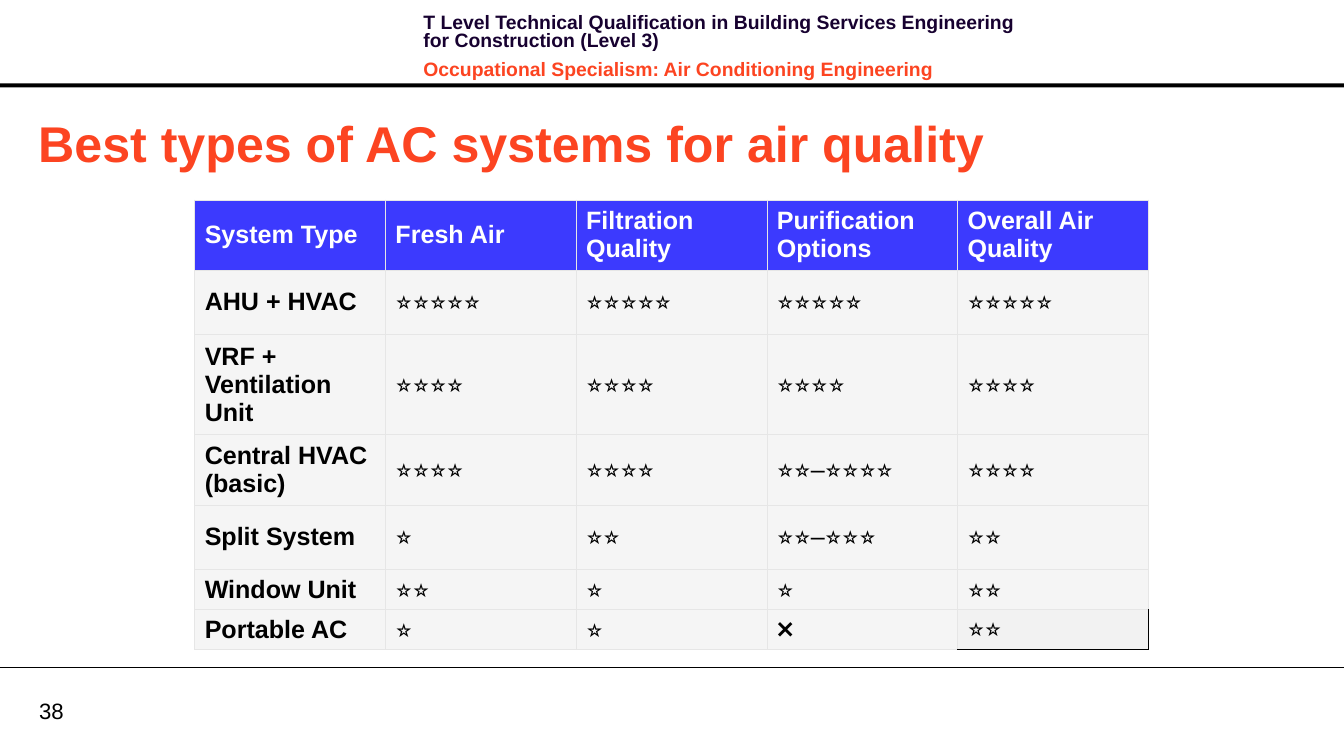
from lxml import etree
from pptx import Presentation
from pptx import util as u
from pptx.dml.color import RGBColor
from pptx.enum import shapes, text
from pptx.oxml import ns

COLOURS = {
    "black": "000000", "white": "FFFFFF", "navy": "170130", "orange": "FC4421",
    "blue": "3C3AFE", "grey": "F5F5F5", "dark grey": "F2F2F2", "border": "E6E6E6",
}


def write(para, words, size, colour, bold=False):
    span = para.add_run()
    span.text = words
    formats = {"name": "Arial", "size": u.Pt(size), "bold": bold}
    for key, value in formats.items():
        setattr(span.font, key, value)
    span.font.color.rgb = RGBColor.from_string(COLOURS[colour])


def set_border(cell, side, colour, width):
    line = etree.SubElement(cell._tc.get_or_add_tcPr(), ns.qn("a:" + side), w=str(u.Pt(width)))
    fill = etree.SubElement(line, ns.qn("a:solidFill"))
    etree.SubElement(fill, ns.qn("a:srgbClr"), val=COLOURS[colour])


deck = Presentation()
deck.slide_width = u.Inches(13.39)
deck.slide_height = u.Inches(7.48)
page = deck.slides.add_slide(deck.slide_layouts[5])

# Header bar and footer rule
bar = page.shapes.add_shape(shapes.MSO_SHAPE.RECTANGLE, 0, u.Inches(0.83), deck.slide_width, u.Inches(0.04))
bar.shadow.inherit = False
bar.fill.solid()
bar.fill.fore_color.rgb = RGBColor.from_string(COLOURS["black"])
bar.line.fill.background()

rule = page.shapes.add_connector(
    shapes.MSO_CONNECTOR.STRAIGHT, 0, u.Inches(6.65), deck.slide_width, u.Inches(6.65))
rule.line.color.rgb = RGBColor.from_string(COLOURS["black"])
rule.line.width = u.Pt(0.75)
etree.SubElement(rule._element.spPr, ns.qn("a:effectLst"))

# Course header
header = page.shapes.add_textbox(u.Inches(4.12), u.Inches(0.1), u.Inches(6.17), u.Inches(0.64)).text_frame
header.word_wrap = True
header_lines = [
    ("T Level Technical Qualification in Building Services Engineering for Construction (Level 3)", "navy"),
    ("Occupational Specialism: Air Conditioning Engineering", "orange"),
]
for index, (words, colour) in enumerate(header_lines):
    para = header.add_paragraph() if index else header.paragraphs[0]
    spacing = {"line_spacing": u.Pt(13), "space_before": u.Pt(4 if index else 0), "space_after": u.Pt(4)}
    for key, value in spacing.items():
        setattr(para, key, value)
    write(para, words, 13.9, colour, True)

# Page number
number = page.shapes.add_textbox(u.Inches(0.39), u.Inches(6.94), u.Inches(0.64), u.Inches(0.27)).text_frame
number_format = {
    "margin_left": 0, "margin_top": 0, "margin_right": 0, "margin_bottom": 0,
    "word_wrap": True, "vertical_anchor": text.MSO_ANCHOR.MIDDLE,
}
for key, value in number_format.items():
    setattr(number, key, value)
write(number.paragraphs[0], "38", 15.9, "black")

# Title
title = page.shapes.title
title_place = {"left": 0.28, "top": 1.06, "width": 11.47, "height": 0.71}
for key, value in title_place.items():
    setattr(title, key, u.Inches(value))
title.text_frame.auto_size = text.MSO_AUTO_SIZE.NONE
title.text_frame.vertical_anchor = text.MSO_ANCHOR.MIDDLE
title.text_frame.paragraphs[0].alignment = text.PP_ALIGN.LEFT
write(title.text_frame.paragraphs[0], "Best types of AC systems for air quality", 36, "orange", True)

# Ratings table
ratings = [
    ["System Type", "Fresh Air", "Filtration Quality", "Purification Options", "Overall Air Quality"],
    ["AHU + HVAC", "⭐⭐⭐⭐⭐", "⭐⭐⭐⭐⭐", "⭐⭐⭐⭐⭐", "⭐⭐⭐⭐⭐"],
    ["VRF + Ventilation Unit", "⭐⭐⭐⭐", "⭐⭐⭐⭐", "⭐⭐⭐⭐", "⭐⭐⭐⭐"],
    ["Central HVAC (basic)", "⭐⭐⭐⭐", "⭐⭐⭐⭐", "⭐⭐–⭐⭐⭐⭐", "⭐⭐⭐⭐"],
    ["Split System", "⭐", "⭐⭐", "⭐⭐–⭐⭐⭐", "⭐⭐"],
    ["Window Unit", "⭐⭐", "⭐", "⭐", "⭐⭐"],
    ["Portable AC", "⭐", "⭐", "❌", "⭐⭐"],
]
row_heights = [0.64, 0.64, 0.92, 0.64, 0.64, 0.37, 0.37]
table = page.shapes.add_table(
    len(ratings), len(ratings[0]), u.Inches(1.94), u.Inches(1.99),
    u.Inches(9.5), u.Inches(sum(row_heights))).table
table.horz_banding = False
for column in table.columns:
    column.width = u.Inches(1.9)

for r, row in enumerate(ratings):
    table.rows[r].height = u.Inches(row_heights[r])
    for c, words in enumerate(row):
        cell = table.cell(r, c)
        is_head = r == 0
        is_last = r == len(ratings) - 1 and c == len(row) - 1
        write(cell.text_frame.paragraphs[0], words, 18, "white" if is_head else "black", is_head or c == 0)
        cell.vertical_anchor = text.MSO_ANCHOR.TOP if is_last else text.MSO_ANCHOR.MIDDLE
        # Borders come before the fill in the cell properties
        for side in ("lnL", "lnR", "lnT", "lnB"):
            if is_last and side in ("lnR", "lnB"):
                set_border(cell, side, "black", 1)
            else:
                set_border(cell, side, "border", 0.5)
        cell.fill.solid()
        fill = "blue" if is_head else "dark grey" if is_last else "grey"
        cell.fill.fore_color.rgb = RGBColor.from_string(COLOURS[fill])

deck.save("out.pptx")
